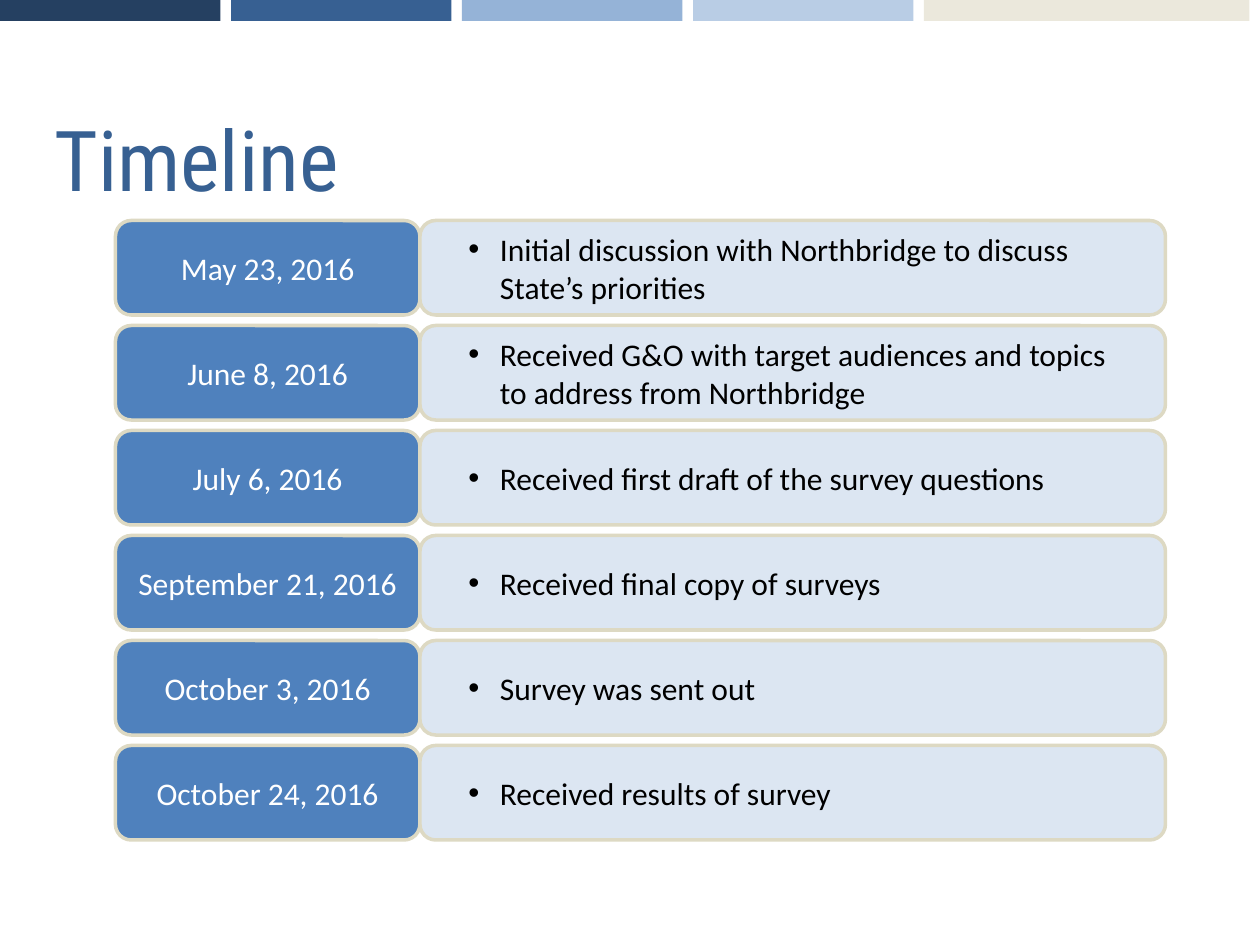
from lxml.etree import SubElement
from pptx import Presentation
from pptx.dml.color import RGBColor
from pptx.enum.shapes import MSO_SHAPE
from pptx.enum.text import MSO_ANCHOR, PP_ALIGN
from pptx.oxml.ns import qn
from pptx.util import Pt

BARS = [
    ("254061", 126, None),
    ("376092", 126, None),
    ("95B3D7", 126, None),
    ("B9CDE5", 126, None),
    ("DDD9C3", 186, 58),
]
BAR_PITCH = 132

EVENTS = [
    ("May 23, 2016", "Initial discussion with Northbridge to discuss State’s priorities"),
    ("June 8, 2016", "Received G&O with target audiences and topics to address from Northbridge"),
    ("July 6, 2016", "Received first draft of the survey questions"),
    ("September 21, 2016", "Received final copy of surveys"),
    ("October 3, 2016", "Survey was sent out"),
    ("October 24, 2016", "Received results of survey"),
]
FIRST_ROW, ROW_PITCH, ROW_HEIGHT = 126, 60, 54


def color(value):
    return RGBColor.from_string(value)


class TimelineSlide:
    title_format = {"name": "Roboto Condensed", "size": Pt(48)}
    row_format = {"name": "Calibri", "size": Pt(18)}
    outline = "DDD9C3"

    def __init__(self, deck):
        self.page = deck.slides.add_slide(deck.slide_layouts[5])

    def add_text(self, para, text, font_format, text_color):
        span = para.add_run()
        span.text = text
        for name, value in font_format.items():
            setattr(span.font, name, value)
        span.font.color.rgb = color(text_color)

    def title(self, text, left, top, width, height):
        box = self.page.shapes.title
        place = {"left": left, "top": top, "width": width, "height": height}
        for name, value in place.items():
            setattr(box, name, Pt(value))
        box.text_frame.vertical_anchor = MSO_ANCHOR.MIDDLE
        para = box.text_frame.paragraphs[0]
        para.alignment = PP_ALIGN.LEFT
        self.add_text(para, text, self.title_format, "376092")

    def shape(self, kind, left, top, width, height, fill):
        box = self.page.shapes.add_shape(kind, Pt(left), Pt(top), Pt(width), Pt(height))
        box.shadow.inherit = False
        box.fill.solid()
        box.fill.fore_color.rgb = color(fill)
        box.line.fill.background()
        return box

    def bar(self, left, width, fill, opacity):
        box = self.shape(MSO_SHAPE.RECTANGLE, left, 0, width, 12, fill)
        if opacity:
            tint = next(box.element.spPr.iter(qn("a:srgbClr")))
            SubElement(tint, qn("a:alpha"), val=str(opacity * 1000))

    def card(self, left, top, width, fill):
        box = self.shape(MSO_SHAPE.ROUNDED_RECTANGLE, left, top, width, ROW_HEIGHT, fill)
        box.line.color.rgb = color(self.outline)
        box.line.width = Pt(2)
        box.text_frame.word_wrap = True
        box.text_frame.vertical_anchor = MSO_ANCHOR.MIDDLE
        return box

    def date(self, text, top):
        box = self.card(66, top, 174, "4F81BD")
        para = box.text_frame.paragraphs[0]
        para.alignment = PP_ALIGN.CENTER
        self.add_text(para, text, self.row_format, "FFFFFF")

    def event(self, text, top):
        box = self.card(240, top, 426, "DCE6F2")
        box.text_frame.margin_right = Pt(18)
        para = box.text_frame.paragraphs[0]
        para.alignment = PP_ALIGN.LEFT
        para.level = 1
        properties = para._p.get_or_add_pPr()
        properties.set("marL", str(Pt(36)))
        properties.set("indent", str(-Pt(18)))
        SubElement(properties, qn("a:buFont"), typeface="Arial")
        SubElement(properties, qn("a:buChar"), char="•")
        self.add_text(para, text, self.row_format, "000000")


def main():
    deck = Presentation()
    deck.slide_width, deck.slide_height = Pt(720), Pt(540)
    slide = TimelineSlide(deck)
    for index, (fill, width, opacity) in enumerate(BARS):
        slide.bar(index * BAR_PITCH, width, fill, opacity)
    slide.title("Timeline", 24, 42, 582, 96)
    for index, (date, event) in enumerate(EVENTS):
        top = FIRST_ROW + index * ROW_PITCH
        slide.date(date, top)
        slide.event(event, top)
    deck.save("out.pptx")


if __name__ == "__main__":
    main()
